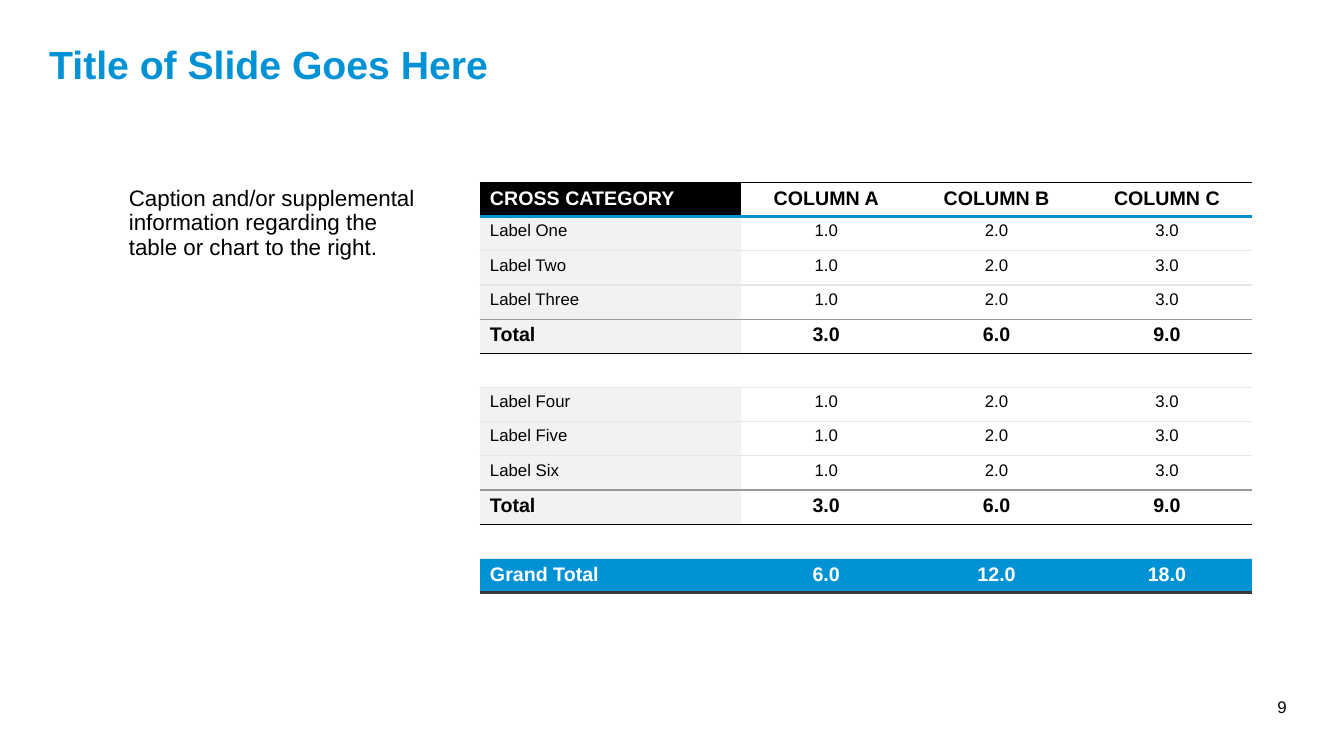
import pptx
import pptx.dml.color
import pptx.enum.text
import pptx.oxml
import pptx.oxml.ns
import pptx.util

Inches = pptx.util.Inches
Align = pptx.enum.text.PP_ALIGN
Anchor = pptx.enum.text.MSO_ANCHOR

BLUE, BLACK, WHITE = "0092D5", "000000", "FFFFFF"
PALE = ("E7E6E6", 1)
GRAY = ("999999", 1)
DARK = (BLACK, 1)
THICK = (BLUE, 2.25)
BASE = ("383838", 2.25)

LABEL = (12, False, BLACK, "F2F2F2", None)
TOTAL = (14, True, BLACK, "F2F2F2", None)
GAP = (12, False, BLACK, None, None)
HEAD = (14, True, BLACK, BLACK, None)
GRAND = (14, True, WHITE, BLUE, BLUE)

ONES = ["1.0", "2.0", "3.0"]
SUMS = ["3.0", "6.0", "9.0"]
ROWS = [
    (HEAD, ["CROSS CATEGORY", "COLUMN A", "COLUMN B", "COLUMN C"], THICK),
    (LABEL, ["Label One"] + ONES, PALE),
    (LABEL, ["Label Two"] + ONES, PALE),
    (LABEL, ["Label Three"] + ONES, GRAY),
    (TOTAL, ["Total"] + SUMS, DARK),
    (GAP, [""] * 4, PALE),
    (LABEL, ["Label Four"] + ONES, PALE),
    (LABEL, ["Label Five"] + ONES, PALE),
    (LABEL, ["Label Six"] + ONES, GRAY),
    (TOTAL, ["Total"] + SUMS, DARK),
    (GAP, [""] * 4, PALE),
    (GRAND, ["Grand Total", "6.0", "12.0", "18.0"], BASE),
]


def color(code):
    return pptx.dml.color.RGBColor.from_string(code)


class Deck:
    """Hold the style and the current slide, and add elements to it."""

    def __init__(self, font):
        self.font = font
        self.show = pptx.Presentation()
        self.show.slide_width = Inches(13.33)
        self.show.slide_height = Inches(7.5)
        self.slide = self.show.slides.add_slide(self.show.slide_layouts[6])

    def line(self, frame, words, size, bold, shade, align):
        line = frame.paragraphs[0]
        line.text = words
        line.alignment = align
        line.font.name = self.font
        line.font.size = pptx.util.Pt(size)
        line.font.bold = bold
        line.font.color.rgb = color(shade)
        return line

    def text(self, box, words, size, bold=False, shade=BLACK,
             align=Align.LEFT, anchor=Anchor.TOP, space=1.0):
        frame = self.slide.shapes.add_textbox(*map(Inches, box)).text_frame
        frame.word_wrap = True
        frame.vertical_anchor = anchor
        line = self.line(frame, words, size, bold, shade, align)
        line.line_spacing = space

    def edge(self, cell, side, rule):
        props = cell._tc.get_or_add_tcPr()
        space = pptx.oxml.ns.nsdecls("a")
        if rule:
            shade, width = rule
            paint = f'<a:solidFill><a:srgbClr val="{shade}"/></a:solidFill>'
        else:
            width, paint = 0, "<a:noFill/>"
        props.append(pptx.oxml.parse_xml(
            f'<a:ln{side} {space} w="{pptx.util.Pt(width)}">{paint}</a:ln{side}>'))

    def cell(self, cell, words, style, first, top, base):
        size, bold, shade, lead, rest = style
        for side, rule in (("L", None), ("R", None), ("T", top), ("B", base)):
            self.edge(cell, side, rule)
        fill = lead if first else rest
        if fill:
            cell.fill.solid()
            cell.fill.fore_color.rgb = color(fill)
        else:
            cell.fill.background()
        if fill == BLACK:
            shade = WHITE
        if not words:
            cell.margin_top = cell.margin_bottom = 0
        align = Align.LEFT if first else Align.CENTER
        self.line(cell.text_frame, words, size, bold, shade, align)

    def table(self, left, top, widths, height, rows):
        grid = self.slide.shapes.add_table(
            len(rows), len(widths), Inches(left), Inches(top),
            Inches(sum(widths)), Inches(height)).table
        grid.first_row = grid.horz_banding = False
        for col, width in zip(grid.columns, widths):
            col.width = Inches(width)
        above = DARK
        for r, (style, words, below) in enumerate(rows):
            grid.rows[r].height = Inches(height / len(rows))
            for c, word in enumerate(words):
                self.cell(grid.cell(r, c), word, style, c == 0, above, below)
            above = below

    def save(self):
        self.show.save("out.pptx")


def main():
    deck = Deck("Arial")
    deck.text((9.86, 6.81, 3, 0.4), "9", 12, align=Align.RIGHT,
              anchor=Anchor.MIDDLE)
    deck.text((0.39, 0.4, 12.03, 0.92), "Title of Slide Goes Here", 28,
              bold=True, shade=BLUE, space=0.9)
    deck.text((1.18, 1.81, 3.06, 4.41),
              "Caption and/or supplemental information regarding the "
              "table or chart to the right.", 16, space=0.9)
    deck.table(4.76, 1.81, [2.59] + [1.69] * 3, 4.07, ROWS)
    deck.save()


if __name__ == "__main__":
    main()
